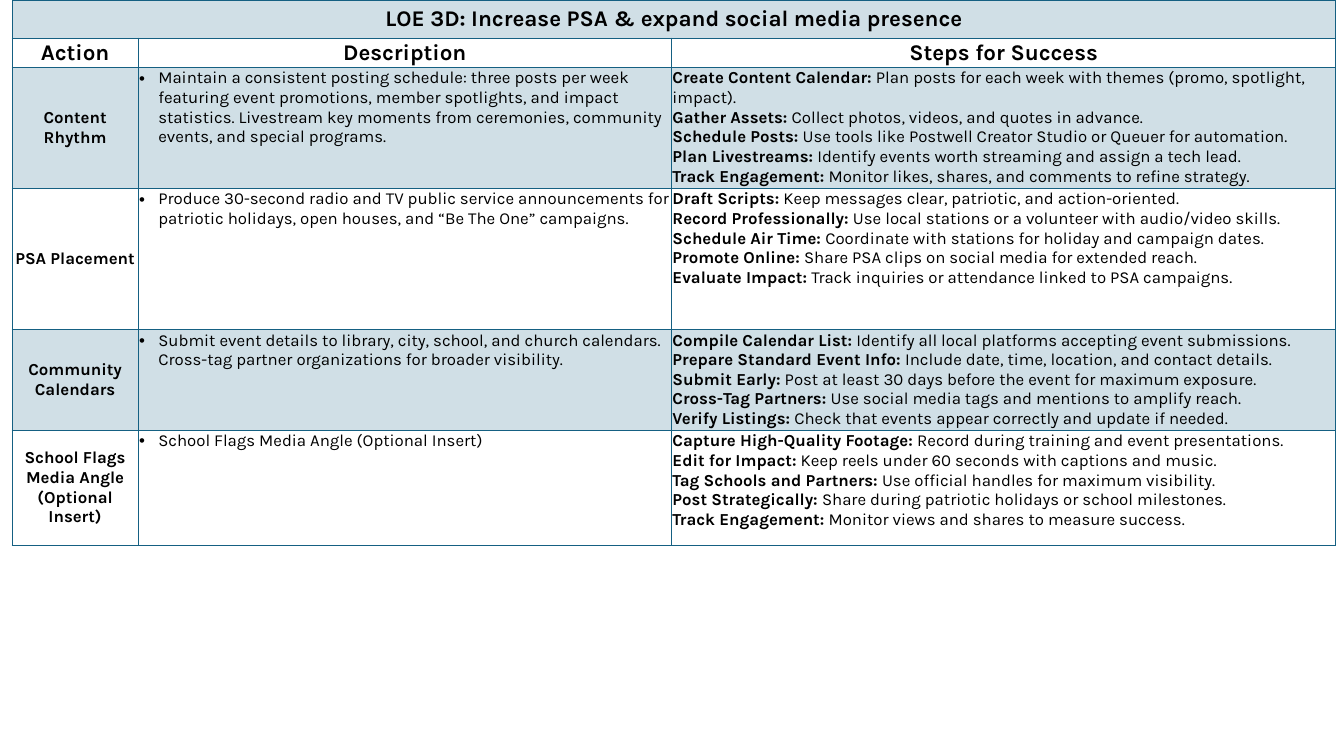
"""Builds the LOE 3D action plan slide as one table."""
from lxml import etree
from pptx import Presentation
from pptx.dml.color import RGBColor
from pptx.enum.text import MSO_ANCHOR, PP_ALIGN
from pptx.oxml.ns import qn
from pptx.util import Inches, Pt

CENTER, LEFT = PP_ALIGN.CENTER, PP_ALIGN.LEFT
MIDDLE, TOP = MSO_ANCHOR.MIDDLE, MSO_ANCHOR.TOP
COLORS = {"border": "156082", "band": "D0DFE6", "plain": "FFFFFF", "text": "000000"}
FONT = "Karla"

TITLE = "LOE 3D: Increase PSA & expand social media presence"
HEADINGS = ["Action", "Description", "Steps for Success"]
ACTIONS = [
    ("Content Rhythm",
     "Maintain a consistent posting schedule: three posts per week featuring event promotions, "
     "member spotlights, and impact statistics. Livestream key moments from ceremonies, "
     "community events, and special programs.",
     [("Create Content Calendar:", "Plan posts for each week with themes (promo, spotlight, impact)."),
      ("Gather Assets:", "Collect photos, videos, and quotes in advance."),
      ("Schedule Posts:", "Use tools like Postwell Creator Studio or Queuer for automation."),
      ("Plan Livestreams:", "Identify events worth streaming and assign a tech lead."),
      ("Track Engagement:", "Monitor likes, shares, and comments to refine strategy.")]),
    ("PSA Placement",
     "Produce 30-second radio and TV public service announcements for patriotic holidays, "
     "open houses, and “Be The One” campaigns.",
     [("Draft Scripts:", "Keep messages clear, patriotic, and action-oriented."),
      ("Record Professionally:", "Use local stations or a volunteer with audio/video skills."),
      ("Schedule Air Time:", "Coordinate with stations for holiday and campaign dates."),
      ("Promote Online:", "Share PSA clips on social media for extended reach."),
      ("Evaluate Impact:", "Track inquiries or attendance linked to PSA campaigns.")]),
    ("Community Calendars",
     "Submit event details to library, city, school, and church calendars. "
     "Cross-tag partner organizations for broader visibility.",
     [("Compile Calendar List:", "Identify all local platforms accepting event submissions."),
      ("Prepare Standard Event Info:", "Include date, time, location, and contact details."),
      ("Submit Early:", "Post at least 30 days before the event for maximum exposure."),
      ("Cross-Tag Partners:", "Use social media tags and mentions to amplify reach."),
      ("Verify Listings:", "Check that events appear correctly and update if needed.")]),
    ("School Flags Media Angle (Optional Insert)",
     "School Flags Media Angle (Optional Insert)",
     [("Capture High-Quality Footage:", "Record during training and event presentations."),
      ("Edit for Impact:", "Keep reels under 60 seconds with captions and music."),
      ("Tag Schools and Partners:", "Use official handles for maximum visibility."),
      ("Post Strategically:", "Share during patriotic holidays or school milestones."),
      ("Track Engagement:", "Monitor views and shares to measure success.")]),
]
COLUMN_WIDTHS = [1.25, 5.29, 6.59]
ROW_HEIGHTS = [0.38, 0.29, 1.2, 1.4, 1.0, 1.14]


def write(cell, lines, size=12, align=LEFT, anchor=TOP, bullet=False):
    """Fill a cell with lines, each a list of (text, bold) parts."""
    cell.vertical_anchor = anchor
    for number, parts in enumerate(lines):
        frame = cell.text_frame
        paragraph = frame.add_paragraph() if number else frame.paragraphs[0]
        paragraph.alignment = align
        if bullet:
            properties = paragraph._p.get_or_add_pPr()
            properties.set("marL", str(Inches(0.19)))
            properties.set("indent", str(Inches(-0.19)))
            etree.SubElement(properties, qn("a:buFont"), typeface="Arial")
            etree.SubElement(properties, qn("a:buChar"), char="•")
        for text, bold in parts:
            run = paragraph.add_run()
            run.text = text
            run.font.name = FONT
            run.font.size = Pt(size)
            run.font.bold = bold
            run.font.color.rgb = RGBColor.from_string(COLORS["text"])


def dress(cell, fill):
    """Set a cell's margins, borders and fill."""
    cell.margin_left = cell.margin_right = Inches(0.01)
    cell.margin_top = cell.margin_bottom = Inches(0.01)
    properties = cell._tc.get_or_add_tcPr()
    for side in ("lnL", "lnR", "lnT", "lnB"):
        border = etree.SubElement(properties, qn(f"a:{side}"), w=str(Pt(1)))
        solid = etree.SubElement(border, qn("a:solidFill"))
        etree.SubElement(solid, qn("a:srgbClr"), val=COLORS["border"])
    cell.fill.solid()
    cell.fill.fore_color.rgb = RGBColor.from_string(fill)


def main():
    """Lay out the table and save the deck."""
    deck = Presentation()
    deck.slide_width, deck.slide_height = Inches(13.33), Inches(7.5)
    slide = deck.slides.add_slide(deck.slide_layouts[6])
    plan = slide.shapes.add_table(
        len(ROW_HEIGHTS), len(COLUMN_WIDTHS), Inches(0.12), Inches(0),
        Inches(sum(COLUMN_WIDTHS)), Inches(sum(ROW_HEIGHTS))).table
    plan.first_row = plan.horz_banding = False
    for column, width in zip(plan.columns, COLUMN_WIDTHS):
        column.width = Inches(width)
    for index, (row, height) in enumerate(zip(plan.rows, ROW_HEIGHTS)):
        row.height = Inches(height)
        for cell in row.cells:
            dress(cell, COLORS["plain" if index % 2 else "band"])

    plan.cell(0, 0).merge(plan.cell(0, len(COLUMN_WIDTHS) - 1))
    write(plan.cell(0, 0), [[(TITLE, True)]], size=16, align=CENTER, anchor=MIDDLE)
    for column, heading in enumerate(HEADINGS):
        write(plan.cell(1, column), [[(heading, True)]], size=16, align=CENTER, anchor=MIDDLE)
    for row, (action, description, steps) in enumerate(ACTIONS, start=2):
        write(plan.cell(row, 0), [[(action, True)]], align=CENTER, anchor=MIDDLE)
        write(plan.cell(row, 1), [[(description, False)]], bullet=True)
        write(plan.cell(row, 2), [[(step, True), (f" {detail}", False)] for step, detail in steps])
    deck.save("out.pptx")


if __name__ == "__main__":
    main()
